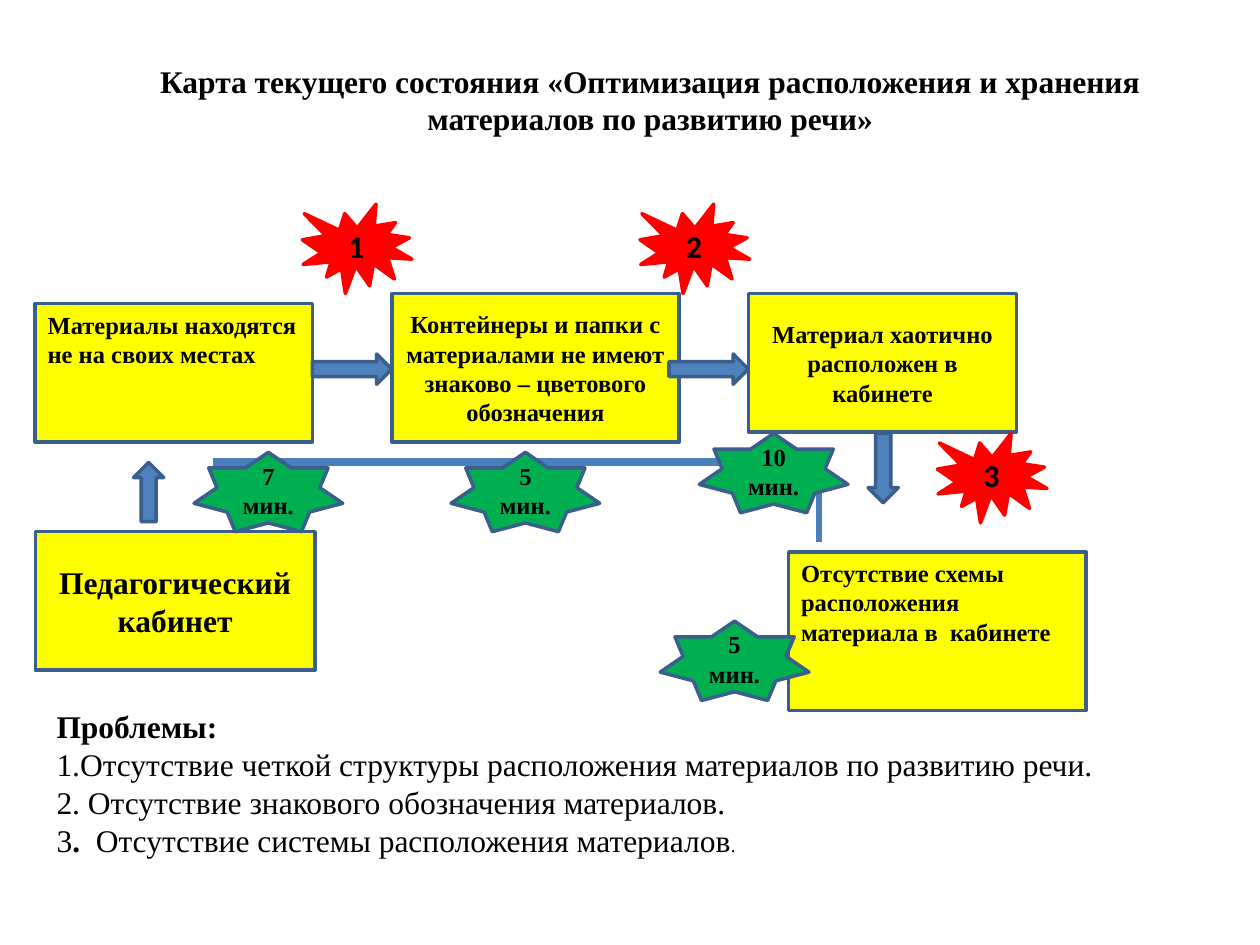
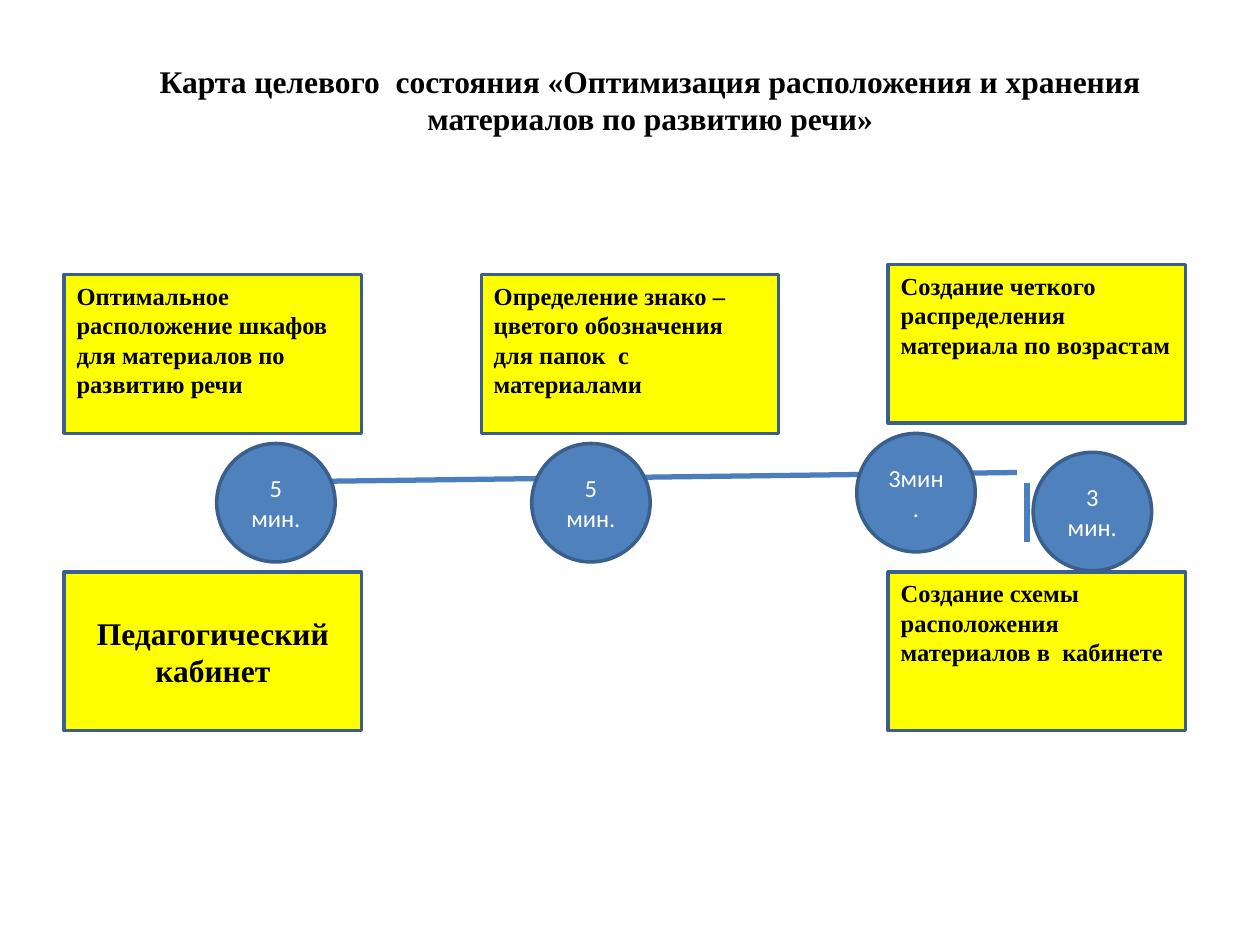
from lxml import etree
from pptx import Presentation
from pptx.dml.color import RGBColor
from pptx.enum.shapes import MSO_CONNECTOR, MSO_SHAPE
from pptx.enum.text import MSO_ANCHOR, MSO_AUTO_SIZE, PP_ALIGN
from pptx.oxml.ns import qn
from pptx.util import Inches, Pt

RECT, STAR, SEAL = MSO_SHAPE.RECTANGLE, MSO_SHAPE.STAR_7_POINT, MSO_SHAPE.EXPLOSION1
OVAL, UP = MSO_SHAPE.OVAL, MSO_SHAPE.UP_ARROW
RIGHT, DOWN = MSO_SHAPE.RIGHT_ARROW, MSO_SHAPE.DOWN_ARROW
STRAIGHT = MSO_CONNECTOR.STRAIGHT
TOP, MIDDLE = MSO_ANCHOR.TOP, MSO_ANCHOR.MIDDLE
LEFT, CENTER = PP_ALIGN.LEFT, PP_ALIGN.CENTER

YELLOW, GREEN, RED, BLUE = "FFFF00", "00B050", "FF0000", "4F81BD"
OUTLINE, LINK, BLACK, WHITE = "3A5F8C", "4B7EBC", "000000", "FFFFFF"
SERIF, SANS = "Times New Roman", "Calibri"


def rgb(value):
    return RGBColor.from_string(value)


class ProcessMap:
    """Shared style of the maps and the slide being drawn."""

    def __init__(self):
        self.prs = Presentation()
        self.prs.slide_width, self.prs.slide_height = Inches(10), Inches(7.5)
        self.slide = None

    def new_slide(self, title):
        self.slide = self.prs.slides.add_slide(self.prs.slide_layouts[6])
        frame = self.text_frame(0.75, 0.44, 8.82, 0.71, wrap=True)
        frame.text = title
        frame.paragraphs[0].alignment = CENTER
        self.style(frame.paragraphs[0].runs[0], 18)

    def style(self, run, size, color=BLACK, bold=True, font=SERIF):
        run.font.size, run.font.bold, run.font.name = Pt(size), bold, font
        run.font.color.rgb = rgb(color)

    def text_frame(self, x, y, w, h, wrap):
        box = self.slide.shapes.add_textbox(Inches(x), Inches(y), Inches(w), Inches(h))
        frame = box.text_frame
        frame.word_wrap = wrap
        frame.auto_size = MSO_AUTO_SIZE.SHAPE_TO_FIT_TEXT
        return frame

    def figure(self, kind, x, y, w, h, fill, outline=OUTLINE, text="", size=14,
               align=CENTER, anchor=MIDDLE, **look):
        shape = self.slide.shapes.add_shape(kind, Inches(x), Inches(y), Inches(w), Inches(h))
        shape.shadow.inherit = False
        shape.fill.solid()
        shape.fill.fore_color.rgb = rgb(fill)
        shape.line.color.rgb = rgb(outline)
        shape.line.width = Pt(2)
        if text:
            frame = shape.text_frame
            frame.text = text
            frame.vertical_anchor = anchor
            frame.paragraphs[0].alignment = align
            self.style(frame.paragraphs[0].runs[0], size, **look)

    def centered_box(self, text, x, y, w=2.36, h=1.26, size=14):
        self.figure(RECT, x, y, w, h, YELLOW, text=text, size=size)

    def note_box(self, text, x, y, w=2.36, h=1.26):
        self.figure(RECT, x, y, w, h, YELLOW, text=text, align=LEFT, anchor=TOP)

    def arrow(self, kind, x, y, w, h):
        self.figure(kind, x, y, w, h, BLUE)

    def problem_seal(self, number, x, y):
        self.figure(SEAL, x, y, 0.87, 0.71, RED, RED, number, 18, font=SANS)

    def time_star(self, text, x, y):
        self.figure(STAR, x, y, 1.18, 0.63, GREEN, text=text)

    def time_circle(self, text, x, y):
        self.figure(OVAL, x, y, 0.94, 0.94, BLUE, text=text,
                    color=WHITE, bold=False, font=SANS)

    def link(self, x1, y1, x2, y2, width=3):
        line = self.slide.shapes.add_connector(
            STRAIGHT, Inches(x1), Inches(y1), Inches(x2), Inches(y2))
        line.line.color.rgb = rgb(LINK)
        line.line.width = Pt(width)
        etree.SubElement(line._element.spPr, qn("a:effectLst"))

    def problem_list(self, x, y, w, h, paragraphs):
        frame = self.text_frame(x, y, w, h, wrap=False)
        frame.vertical_anchor = MIDDLE
        for index, parts in enumerate(paragraphs):
            paragraph = frame.paragraphs[0] if index == 0 else frame.add_paragraph()
            for text, size, bold in parts:
                run = paragraph.add_run()
                run.text = text
                self.style(run, size, bold=bold)


def current_state(page):
    page.new_slide("Карта текущего состояния «Оптимизация расположения и хранения "
                   "материалов по развитию речи»")

    # Process steps
    page.centered_box("Педагогический кабинет", 0.28, 4.22, 2.22, 1.1, size=18)
    page.note_box("Материалы находятся не на своих местах", 0.28, 2.41, 2.2, 1.1)
    page.centered_box("Контейнеры и папки с материалами не имеют "
                      "знаково – цветового обозначения", 3.11, 2.33, 2.28, 1.18)
    page.centered_box("Материал хаотично расположен в кабинете", 5.94, 2.33, 2.13, 1.1)

    # Flow to the last step
    page.arrow(UP, 1.06, 3.67, 0.24, 0.47)
    for x in (2.48, 5.31):
        page.arrow(RIGHT, x, 2.81, 0.63, 0.24)
    page.note_box("Отсутствие схемы расположения материала в  кабинете", 6.26, 4.38)
    page.arrow(DOWN, 6.89, 3.44, 0.24, 0.55)

    # Problem numbers and their list
    for number, x, y in (("1", 2.4, 1.62), ("2", 5.08, 1.62), ("3", 7.44, 3.44)):
        page.problem_seal(number, x, y)
    page.problem_list(0.35, 5.56, 8.51, 1.31, [
        [("Проблемы:", 18, True)],
        [("1.Отсутствие четкой структуры расположения материалов по развитию речи.",
          18, False)],
        [("2. Отсутствие знакового обозначения материалов.", 18, False)],
        [("3", 18, False), (".  ", 18, True),
         ("Отсутствие системы расположения материалов", 18, False), (".", 11, False)],
    ])

    # Timeline
    page.link(1.69, 3.67, 6.42, 3.67, width=4.5)
    page.link(6.5, 3.67, 6.5, 4.3)
    for text, x, y in (("7 мин.", 1.54, 3.59), ("10 мин.", 5.55, 3.44),
                       ("5 мин.", 5.24, 4.93), ("5 мин.", 3.58, 3.59)):
        page.time_star(text, x, y)


def target_state(page):
    page.new_slide("Карта целевого  состояния «Оптимизация расположения и хранения "
                   "материалов по развитию речи»")

    # Process steps
    page.centered_box("Педагогический кабинет", 0.51, 4.54, size=18)
    for text, x, y in (
        ("Оптимальное расположение шкафов для материалов по развитию речи", 0.51, 2.18),
        ("Определение знако – цветого обозначения для папок  с материалами", 3.82, 2.18),
        ("Создание четкого распределения материала по возрастам", 7.05, 2.1),
        ("Создание схемы расположения материалов в  кабинете", 7.05, 4.54),
    ):
        page.note_box(text, x, y)

    # Timeline
    page.link(1.77, 3.83, 8.07, 3.75)
    page.link(8.15, 3.83, 8.15, 4.3)
    for text, x, y in (("5 мин.", 1.72, 3.52), ("5 мин.", 4.22, 3.52),
                       ("3мин.", 6.8, 3.44), ("3 мин.", 8.2, 3.59)):
        page.time_circle(text, x, y)


def main():
    page = ProcessMap()
    current_state(page)
    target_state(page)
    page.prs.save("out.pptx")


if __name__ == "__main__":
    main()
